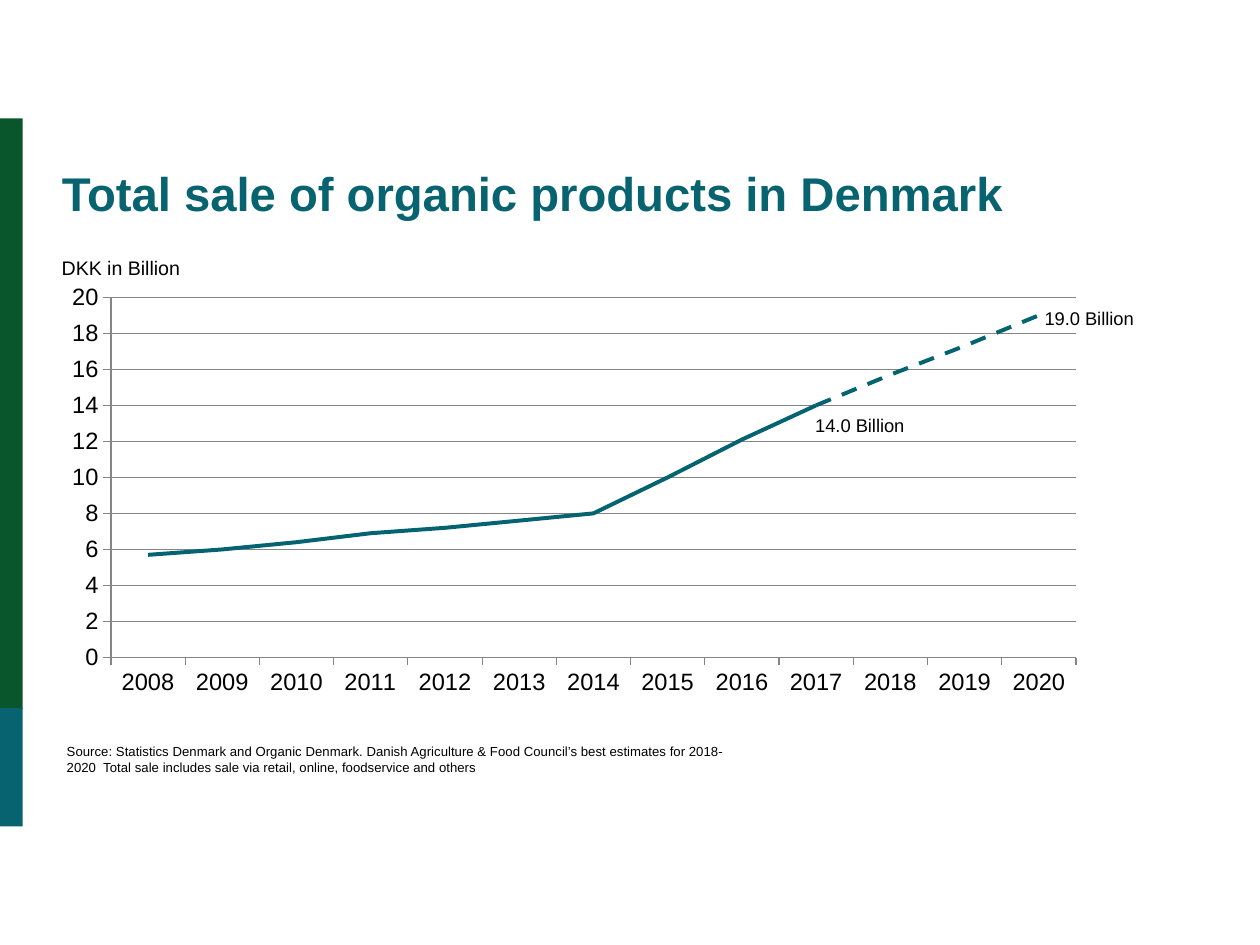
import pptx
import pptx.chart.data
import pptx.dml.color
import pptx.enum.chart
import pptx.enum.dml
import pptx.enum.shapes
import pptx.oxml
import pptx.util

TEAL, GREEN, GREY, BLACK = "076370", "09552C", "858585", "000000"
LINE = "046370"
FONT = "Arial"

YEARS = [str(year) for year in range(2008, 2021)]
SALES = [5.7, 6, 6.4, 6.9, 7.2, 7.6, 8, 10, 12.1, 14]
FORECAST = [14, 15.7, 17.3, 19]
SERIES = {
    "Sales": SALES + [None] * (len(YEARS) - len(SALES)),
    "Forecast": [None] * (len(YEARS) - len(FORECAST)) + FORECAST,
}
# left, top, width, height in inches
FRAME = (0.3, 2.1, 8.7, 3.6)
PLOT = (0.88, 2.36, 7.66, 2.86)
BARS = [(GREEN, (0, 0.94, 0.18, 4.69)), (TEAL, (0, 5.62, 0.18, 0.94))]
# text, box, size, colour, bold
TEXTS = [
    ("Total sale of organic products in Denmark", (0.49, 1.28, 7.49, 0.46), 27, TEAL, True),
    ("DKK in Billion", (0.49, 2.01, 1.1, 0.2), 11.2, BLACK, False),
    ("19.0 Billion", (8.29, 2.42, 0.85, 0.19), 10.5, BLACK, False),
    ("14.0 Billion", (6.47, 3.27, 0.85, 0.19), 10.5, BLACK, False),
    ("Source: Statistics Denmark and Organic Denmark. Danish Agriculture & Food "
     "Council’s best estimates for 2018-2020  Total sale includes sale via retail, "
     "online, foodservice and others", (0.53, 5.88, 5.4, 0.26), 7.5, BLACK, False),
]


def rgb(colour):
    return pptx.dml.color.RGBColor.from_string(colour)


def inches(box):
    return [pptx.util.Inches(v) for v in box]


def style_line(line, colour, width):
    line.color.rgb = rgb(colour)
    line.width = pptx.util.Pt(width)


def add_text(slide, text, box, size, colour, bold):
    tf = slide.shapes.add_textbox(*inches(box)).text_frame
    tf.word_wrap = True
    tf.margin_left = tf.margin_right = tf.margin_bottom = 0
    tf.margin_top = pptx.util.Inches(0.02)
    r = tf.paragraphs[0].add_run()
    r.text = text
    r.font.name, r.font.size, r.font.bold = FONT, pptx.util.Pt(size), bold
    r.font.color.rgb = rgb(colour)


def place_plot(chart):
    """Fix the inner plot area as shares of the chart frame."""
    shares = {
        "x": (PLOT[0] - FRAME[0]) / FRAME[2],
        "y": (PLOT[1] - FRAME[1]) / FRAME[3],
        "w": PLOT[2] / FRAME[2],
        "h": PLOT[3] / FRAME[3],
    }
    modes = "".join(f'<c:{k}Mode val="edge"/>' for k in "xy")
    values = "".join(f'<c:{k} val="{v:.4f}"/>' for k, v in shares.items())
    layout = pptx.oxml.parse_xml(
        '<c:layout xmlns:c="http://schemas.openxmlformats.org/drawingml/2006/chart">'
        f'<c:manualLayout><c:layoutTarget val="inner"/>{modes}{values}'
        '</c:manualLayout></c:layout>')
    plot_area = chart.plots[0]._element.getparent()
    for old in plot_area.findall(layout.tag):
        plot_area.remove(old)
    plot_area.insert(0, layout)


def add_sales_chart(slide):
    data = pptx.chart.data.CategoryChartData()
    data.categories = YEARS
    for name, values in SERIES.items():
        data.add_series(name, values)
    chart = slide.shapes.add_chart(
        pptx.enum.chart.XL_CHART_TYPE.LINE, *inches(FRAME), data).chart
    chart.has_legend = chart.has_title = False
    chart.font.name, chart.font.size = FONT, pptx.util.Pt(13.5)
    chart.font.color.rgb = rgb(BLACK)

    for axis in (chart.category_axis, chart.value_axis):
        axis.major_tick_mark = pptx.enum.chart.XL_TICK_MARK.OUTSIDE
        axis.minor_tick_mark = pptx.enum.chart.XL_TICK_MARK.NONE
        style_line(axis.format.line, GREY, 0.72)
    values = chart.value_axis
    values.minimum_scale, values.maximum_scale, values.major_unit = 0, 20, 2
    values.has_major_gridlines = True
    style_line(values.major_gridlines.format.line, GREY, 0.72)
    values.tick_labels.number_format = "0"
    values.tick_labels.number_format_is_linked = False

    chart.plots[0].vary_by_categories = False
    for series in chart.plots[0].series:
        series.smooth = False
        series.marker.style = pptx.enum.chart.XL_MARKER_STYLE.NONE
        style_line(series.format.line, LINE, 2.28)
        if series.name == "Forecast":
            series.format.line.dash_style = pptx.enum.dml.MSO_LINE.DASH
    place_plot(chart)


def main():
    prs = pptx.Presentation()
    prs.slide_width, prs.slide_height = inches((10, 7.5))
    slide = prs.slides.add_slide(prs.slide_layouts[6])
    for colour, box in BARS:
        s = slide.shapes.add_shape(
            pptx.enum.shapes.MSO_SHAPE.RECTANGLE, *inches(box))
        s.shadow.inherit = False
        s.fill.solid()
        s.fill.fore_color.rgb = rgb(colour)
        s.line.fill.background()
    add_sales_chart(slide)
    for item in TEXTS:
        add_text(slide, *item)
    prs.save("out.pptx")


if __name__ == "__main__":
    main()
